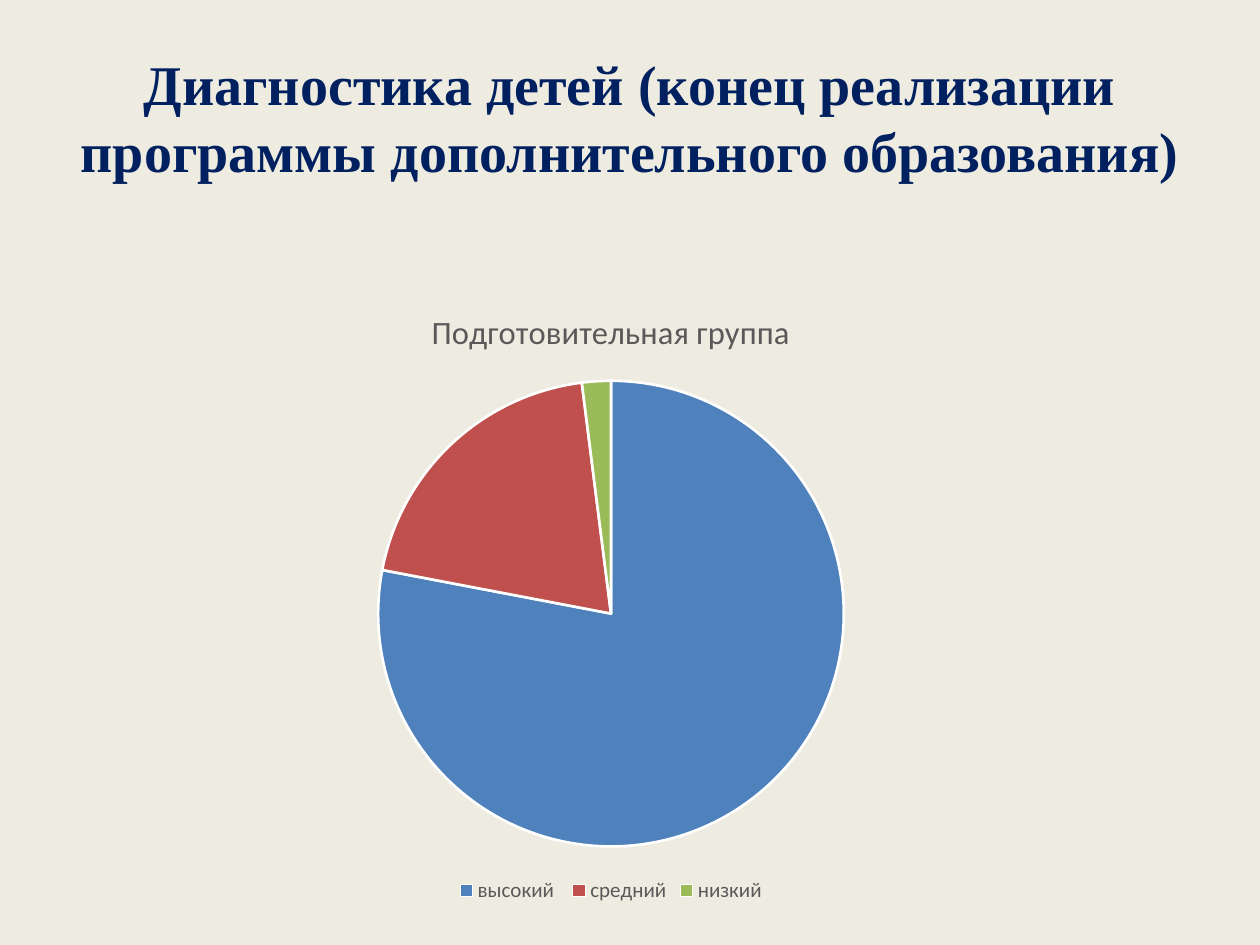
from dataclasses import dataclass

from pptx import Presentation
from pptx.chart.data import CategoryChartData
from pptx.dml.color import RGBColor
from pptx.enum.chart import XL_CHART_TYPE, XL_LEGEND_POSITION
from pptx.enum.text import MSO_ANCHOR, PP_ALIGN
from pptx.util import Emu, Pt

PIE = XL_CHART_TYPE.PIE
BOTTOM = XL_LEGEND_POSITION.BOTTOM
MIDDLE = MSO_ANCHOR.MIDDLE
CENTER = PP_ALIGN.CENTER

EMU_PER_PX = 914400 // 126
TITLE_ONLY_LAYOUT = 5

BACKGROUND = RGBColor(0xEE, 0xEC, 0xE1)
NAVY = RGBColor(0x00, 0x20, 0x60)
GRAY = RGBColor(0x59, 0x59, 0x59)
WHITE = RGBColor(0xFF, 0xFF, 0xFF)
BLUE = RGBColor(0x4F, 0x81, 0xBD)
RED = RGBColor(0xC0, 0x50, 0x4D)
GREEN = RGBColor(0x9B, 0xBB, 0x59)

TITLE_FORMAT = {"name": "Times New Roman", "size": Pt(32), "bold": True}
CHART_TITLE_FORMAT = {"name": "Calibri", "size": Pt(18.6), "bold": False}
LEGEND_FORMAT = {"name": "Calibri", "size": Pt(12), "bold": False}


@dataclass(frozen=True)
class Box:
    left: int
    top: int
    width: int
    height: int

    def emu(self) -> list[Emu]:
        lengths = (self.left, self.top, self.width, self.height)
        return [px(length) for length in lengths]


@dataclass(frozen=True)
class Level:
    name: str
    percent: int
    color: RGBColor


TITLE = "Диагностика детей (конец реализации программы дополнительного образования)"
GROUP = "Подготовительная группа"
LEVELS = [
    Level("высокий ", 78, BLUE),
    Level("средний", 20, RED),
    Level("низкий", 2, GREEN),
]


def px(length: int) -> Emu:
    return Emu(length * EMU_PER_PX)


def format_font(font, values: dict, color: RGBColor) -> None:
    for name, value in values.items():
        setattr(font, name, value)
    font.color.rgb = color


def write_title(slide, text: str, box: Box) -> None:
    title = slide.shapes.title
    title.left, title.top, title.width, title.height = box.emu()
    frame = title.text_frame
    frame.text = text
    frame.vertical_anchor = MIDDLE
    paragraph = frame.paragraphs[0]
    paragraph.alignment = CENTER
    format_font(paragraph.runs[0].font, TITLE_FORMAT, NAVY)


def add_pie(slide, name: str, levels: list[Level], box: Box) -> None:
    data = CategoryChartData()
    data.categories = [level.name for level in levels]
    data.add_series(name, [level.percent for level in levels])
    chart = slide.shapes.add_chart(PIE, *box.emu(), data).chart

    # Chart title and legend
    chart.has_title = True
    title_frame = chart.chart_title.text_frame
    title_frame.text = name
    format_font(title_frame.paragraphs[0].runs[0].font, CHART_TITLE_FORMAT, GRAY)
    chart.chart_title.include_in_layout = False
    chart.has_legend = True
    chart.legend.position = BOTTOM
    chart.legend.include_in_layout = False
    format_font(chart.legend.font, LEGEND_FORMAT, GRAY)

    # Slices
    plot = chart.plots[0]
    plot.vary_by_categories = True
    for index, level in enumerate(levels):
        slice_format = plot.series[0].points[index].format
        slice_format.fill.solid()
        slice_format.fill.fore_color.rgb = level.color
        slice_format.line.color.rgb = WHITE
        slice_format.line.width = Pt(1.5)


def main() -> None:
    presentation = Presentation()
    presentation.slide_width = px(1260)
    presentation.slide_height = px(945)
    slide = presentation.slides.add_slide(presentation.slide_layouts[TITLE_ONLY_LAYOUT])
    slide.background.fill.solid()
    slide.background.fill.fore_color.rgb = BACKGROUND

    write_title(slide, TITLE, Box(63, 38, 1134, 158))
    add_pie(slide, GROUP, LEVELS, Box(44, 284, 1134, 624))
    presentation.save("out.pptx")


if __name__ == "__main__":
    main()
